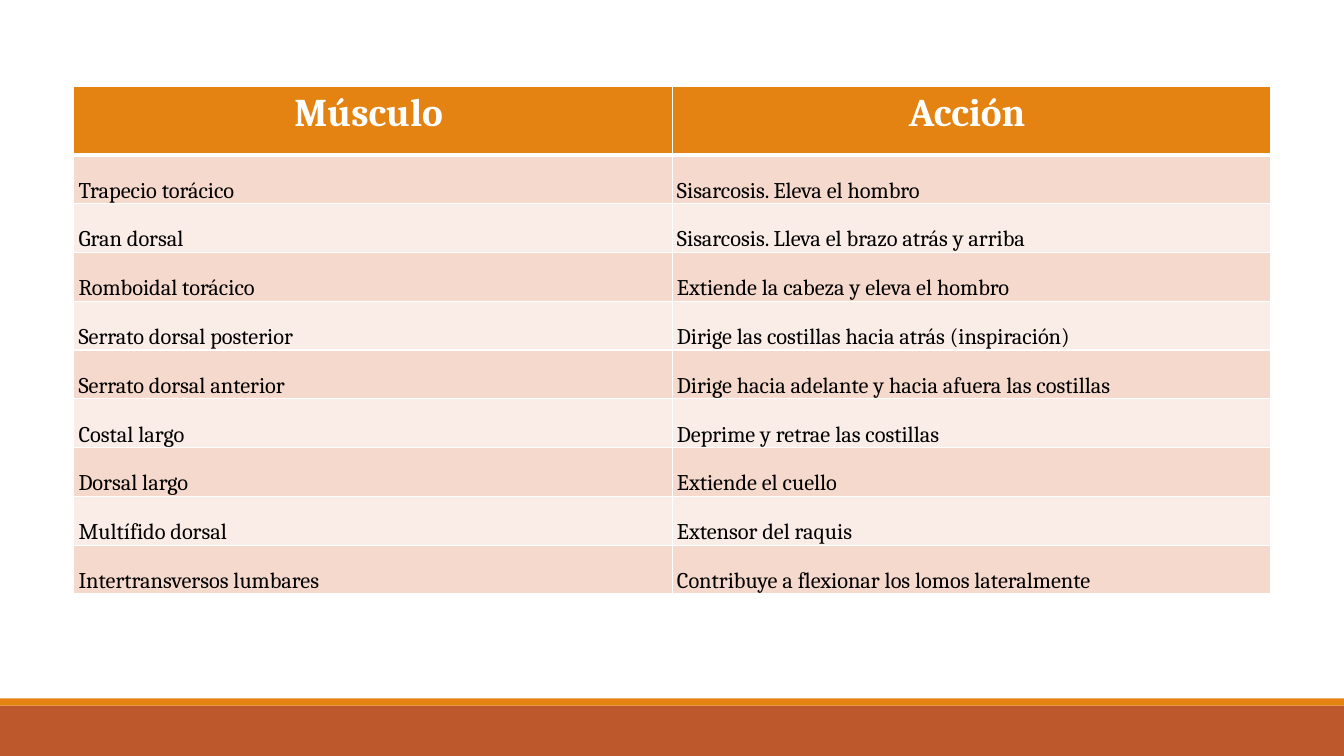
from lxml import etree
from pptx import Presentation
from pptx import util as u
from pptx.dml.color import RGBColor
from pptx.enum import shapes, text
from pptx.oxml.ns import qn

HEADINGS = ("Músculo ", "Acción ")
MUSCLES = [
    ("Trapecio torácico", "Sisarcosis. Eleva el hombro"),
    ("Gran dorsal", "Sisarcosis. Lleva el brazo atrás y arriba"),
    ("Romboidal torácico", "Extiende la cabeza y eleva el hombro"),
    ("Serrato dorsal posterior", "Dirige las costillas hacia atrás (inspiración)"),
    ("Serrato dorsal anterior", "Dirige hacia adelante y hacia afuera las costillas"),
    ("Costal largo", "Deprime y retrae las costillas"),
    ("Dorsal largo", "Extiende el cuello"),
    ("Multífido dorsal", "Extensor del raquis"),
    ("Intertransversos lumbares", "Contribuye a flexionar los lomos lateralmente"),
]
FONT = "Cambria"
ORANGE, RUST, WHITE, BLACK = "E48312", "BD582C", "FFFFFF", "000000"
STRIPES = ("F5D9CC", "FAEDE7")
SLIDE_W, SLIDE_H = 33.87, 19.05
FOOTER_BANDS = [(17.78, 1.27, RUST), (17.6, 0.18, ORANGE)]
TABLE_LEFT, TABLE_TOP, COLUMN_W = 1.86, 2.18, 15.08
HEADING_H, MUSCLE_H = 1.72, 1.23


def paint(fill, color):
    fill.solid()
    fill.fore_color.rgb = RGBColor.from_string(color)


def add_borders(cell, bottom):
    properties = cell._tc.get_or_add_tcPr()
    for side, points in (("L", 1), ("R", 1), ("T", 1), ("B", bottom)):
        border = etree.SubElement(properties, qn(f"a:ln{side}"), w=str(u.Pt(points)))
        solid = etree.SubElement(border, qn("a:solidFill"))
        etree.SubElement(solid, qn("a:srgbClr"), val=WHITE)


def write_cell(cell, wording, size, color, background, bold, bottom):
    add_borders(cell, bottom)
    paint(cell.fill, background)
    cell.text = wording
    paragraph = cell.text_frame.paragraphs[0]
    paragraph.font.name = FONT
    paragraph.font.size = u.Pt(size)
    paragraph.font.bold = bold
    paint(paragraph.font.fill, color)
    return paragraph


def add_footer(slide):
    for top, height, color in FOOTER_BANDS:
        band = slide.shapes.add_shape(
            shapes.MSO_SHAPE.RECTANGLE, 0, u.Cm(top), u.Cm(SLIDE_W), u.Cm(height))
        band.shadow.inherit = False
        paint(band.fill, color)
        band.line.fill.background()


def add_muscle_table(slide):
    heights = [HEADING_H] + [MUSCLE_H] * len(MUSCLES)
    muscles = slide.shapes.add_table(
        len(heights), len(HEADINGS), u.Cm(TABLE_LEFT), u.Cm(TABLE_TOP),
        u.Cm(COLUMN_W * len(HEADINGS)), u.Cm(sum(heights))).table
    for column in muscles.columns:
        column.width = u.Cm(COLUMN_W)
    for row, height in zip(muscles.rows, heights):
        row.height = u.Cm(height)
    for c, heading in enumerate(HEADINGS):
        paragraph = write_cell(muscles.cell(0, c), heading, 28, WHITE, ORANGE, True, 3)
        paragraph.alignment = text.PP_ALIGN.CENTER
    for r, entry in enumerate(MUSCLES):
        for c, wording in enumerate(entry):
            cell = muscles.cell(r + 1, c)
            paragraph = write_cell(cell, wording, 16, BLACK, STRIPES[r % 2], False, 1)
            paragraph.line_spacing = 1.07
            cell.vertical_anchor = text.MSO_ANCHOR.BOTTOM
            cell.margin_left = cell.margin_right = u.Cm(0.12)
            cell.margin_top = cell.margin_bottom = 0


def main():
    """Build the slide of back muscles and their actions."""
    deck = Presentation()
    deck.slide_width, deck.slide_height = u.Cm(SLIDE_W), u.Cm(SLIDE_H)
    slide = deck.slides.add_slide(deck.slide_layouts[6])
    paint(slide.background.fill, WHITE)
    add_footer(slide)
    add_muscle_table(slide)
    deck.save("out.pptx")


if __name__ == "__main__":
    main()
